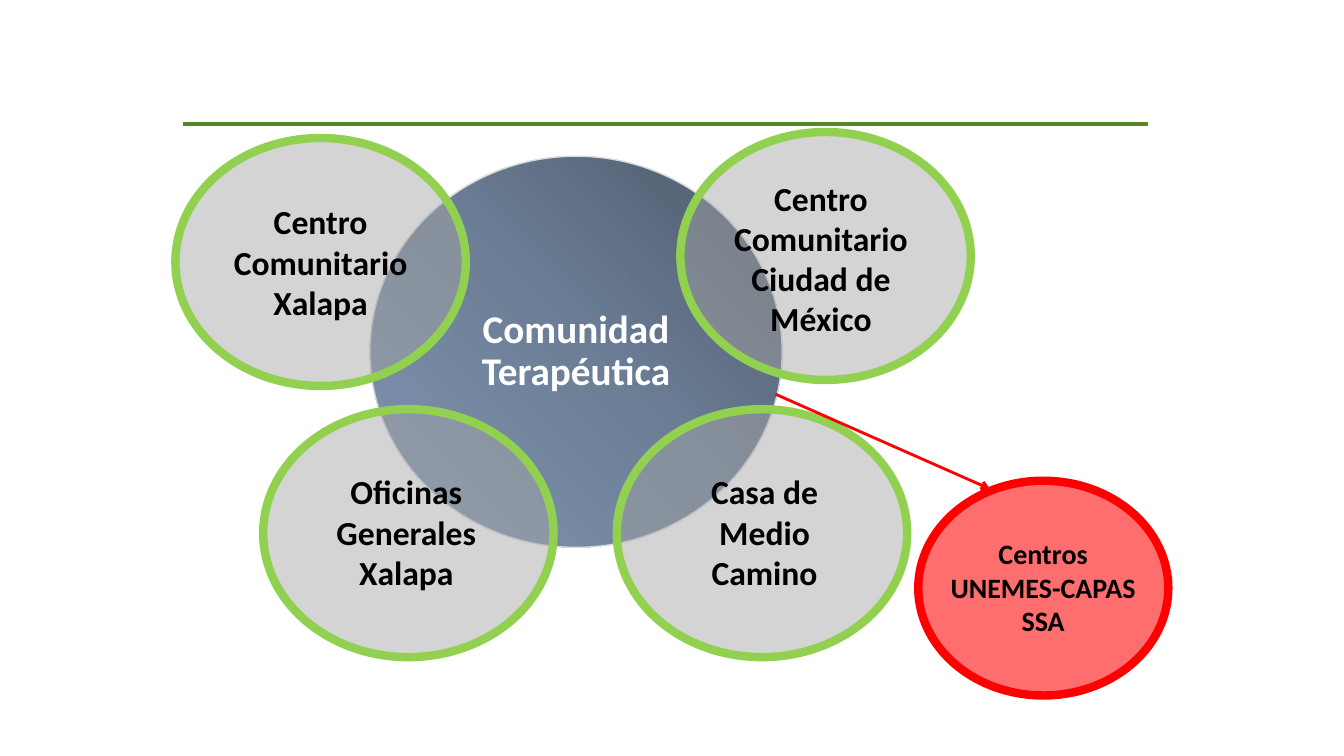
from copy import deepcopy
from dataclasses import dataclass

from lxml import etree
from pptx import Presentation
from pptx import util as u
from pptx.dml.color import RGBColor
from pptx.enum import shapes, text
from pptx.oxml import ns


@dataclass(frozen=True)
class Theme:
    font: str = "Calibri"
    core_size: float = 28
    site_size: float = 24
    partner_size: float = 20
    white: str = "FFFFFF"
    black: str = "000000"
    rule: str = "588725"
    core: tuple = ((0, "4C596A"), (50, "6D7F97"), (100, "8196B4"))
    core_edge: str = "DBDBDB"
    site: str = "A5A5A5"
    site_edge: str = "92D050"
    partner: str = "FF0000"


def write(frame, words, size, color, font, spacing=None, before=None):
    frame.word_wrap = True
    frame.vertical_anchor = text.MSO_ANCHOR.MIDDLE
    paragraph = frame.paragraphs[0]
    paragraph.alignment = text.PP_ALIGN.CENTER
    if spacing:
        paragraph.line_spacing = spacing
    if before:
        paragraph.space_before = u.Pt(before)
    run = paragraph.add_run()
    run.text = words
    run.font.name = font
    run.font.size = u.Pt(size)
    run.font.bold = True
    run.font.color.rgb = RGBColor.from_string(color)


class Board:
    def __init__(self, slide, theme):
        self.slide = slide
        self.theme = theme

    def ellipse(self, box, edge, weight):
        oval = self.slide.shapes.add_shape(shapes.MSO_SHAPE.OVAL, *map(u.Pt, box))
        oval.shadow.inherit = False
        oval.line.color.rgb = RGBColor.from_string(edge)
        oval.line.width = u.Pt(weight)
        return oval

    def tinted(self, box, color, opacity, edge):
        oval = self.ellipse(box, edge, 6)
        oval.fill.solid()
        oval.fill.fore_color.rgb = RGBColor.from_string(color)
        tint = oval._element.spPr.find(ns.qn("a:solidFill"))[0]
        etree.SubElement(tint, ns.qn("a:alpha"), val=str(opacity * 1000))

    def core(self, box, words):
        theme = self.theme
        oval = self.ellipse(box, theme.core_edge, 1)
        oval.fill.gradient()
        oval.fill.gradient_angle = 225
        stops = oval._element.spPr.find(ns.qn("a:gradFill")).find(ns.qn("a:gsLst"))
        stops.insert(1, deepcopy(stops[0]))
        for stop, (position, color) in zip(oval.fill.gradient_stops, theme.core):
            stop.position = position / 100
            stop.color.rgb = RGBColor.from_string(color)
        write(oval.text_frame, words, theme.core_size, theme.white, theme.font,
              spacing=0.9, before=10)

    def label(self, box, words, size):
        caption = self.slide.shapes.add_textbox(*map(u.Pt, box))
        write(caption.text_frame, words, size, self.theme.black, self.theme.font)

    def line(self, start, end, color, weight, arrow=False):
        link = self.slide.shapes.add_connector(
            shapes.MSO_CONNECTOR.STRAIGHT, *map(u.Pt, start + end))
        link.line.color.rgb = RGBColor.from_string(color)
        link.line.width = u.Pt(weight)
        if arrow:
            etree.SubElement(link.line._get_or_add_ln(), ns.qn("a:tailEnd"), type="arrow")
        etree.SubElement(link._element.spPr, ns.qn("a:effectLst"))


def main():
    deck = Presentation()
    deck.slide_width, deck.slide_height = u.Pt(960), u.Pt(540)
    theme = Theme()
    board = Board(deck.slides.add_slide(deck.slide_layouts[6]), theme)

    board.line((131, 88.6), (820, 88.6), theme.rule, 3)
    board.core((264.2, 111.6, 294.5, 279.4), "Comunidad Terapéutica")

    site_extent = (207.4, 177.1)
    sites = [
        ((188, 292.3), (208.1, 332.6, 164.2, 94.3), "Oficinas Generales Xalapa"),
        ((125.3, 98.6), (149.8, 139.7, 158.4, 94.3), "Centro Comunitario Xalapa"),
        ((486, 94.3), (505.4, 122.4, 162, 123.8), "Centro Comunitario Ciudad de México"),
        ((440.6, 292.3), (468.7, 332.6, 154.8, 94.3), "Casa de Medio Camino"),
    ]
    for corner, caption_box, words in sites:
        board.tinted(corner + site_extent, theme.site, 47, theme.site_edge)
        board.label(caption_box, words, theme.site_size)

    board.line((553.7, 281.5), (707, 349.2), theme.partner, 2, arrow=True)
    board.tinted((655.9, 343.4, 178.6, 153.4), theme.partner, 57, theme.partner)
    board.label((667.4, 379.4, 155.5, 79.9), "Centros UNEMES-CAPAS SSA", theme.partner_size)

    deck.save("out.pptx")


if __name__ == "__main__":
    main()
